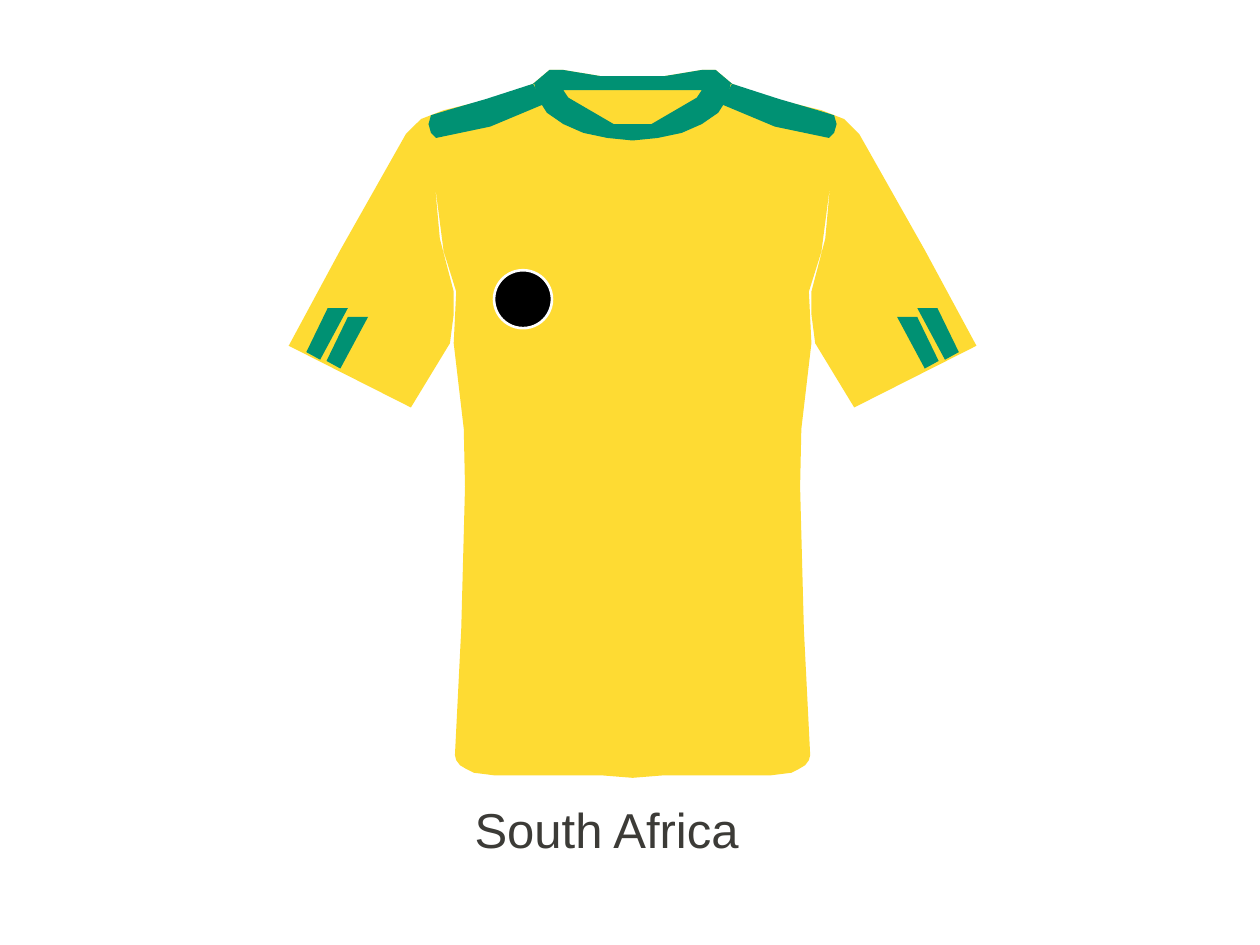
from math import cos, pi, sin

from pptx import Presentation
from pptx.dml.color import RGBColor
from pptx.enum.shapes import MSO_SHAPE
from pptx.enum.text import MSO_ANCHOR, MSO_AUTO_SIZE, PP_ALIGN
from pptx.util import Pt

YELLOW = RGBColor(0xFE, 0xDB, 0x33)
GREEN = RGBColor(0x00, 0x91, 0x73)
BLACK = RGBColor(0x00, 0x00, 0x00)
WHITE = RGBColor(0xFF, 0xFF, 0xFF)
GRAY = RGBColor(0x3C, 0x3B, 0x37)

SHIRT_SPAN = 546
NECKLINE = [(25, 5), (55, 0), (66, 0), (79, 11)]


def quarter_arc(cx, cy, rx, ry, steps=6):
    """List points from the side of an ellipse down to its bottom."""
    angles = [pi / 2 * i / steps for i in range(steps + 1)]
    return [(cx + rx * cos(a), cy + ry * sin(a)) for a in angles]


def flip(points, side):
    """Put points on the right (side 1) or the left (side -1) of the axis."""
    return [(side * x, y) for x, y in points]


def mirror(half):
    """Close a right half with its reflection in the shirt's axis."""
    return half + flip(half, -1)[::-1]


def shift(points, dx, dy):
    """Move points by a step."""
    return [(x + dx, y + dy) for x, y in points]


class Shirt:
    """A symmetric shirt: x runs from its axis, y down from its collar."""

    def __init__(self, s, left, top, width):
        """Scale the shirt's units to the width of the given box."""
        self.s = s
        self.scale = width / SHIRT_SPAN
        self.axis, self.top = int(left + width / 2), int(top)

    def draw(self):
        """Draw every part from back to front."""
        self.body()
        self.collar()
        for side in (-1, 1):
            self.shoulder_band(side)
            self.cuff_stripes(side)
        self.badge(-87, 182, 23)

    def outline(self, color, *contours):
        """Fill closed contours as one shape."""
        builder = self.s.shapes.build_freeform(*contours[0][0], scale=self.scale)
        for i, points in enumerate(contours):
            if i:
                builder.move_to(*points[0])
            builder.add_line_segments(points[1:], close=True)
        sp = builder.convert_to_shape(self.axis, self.top)
        sp.shadow.inherit = False
        sp.fill.solid()
        sp.fill.fore_color.rgb = color
        sp.line.fill.background()

    def body(self):
        """Draw torso and sleeves, with a thin gap along each armhole."""
        shoulder = [(93, 17), (121, 25), (150, 32), (168, 39), (180, 51)]
        sleeve = [(232, 143), (273, 219), (176, 268), (145, 217)]
        armhole_up = [(142, 194), (142, 176), (153, 134), (157, 90)]
        armhole_down = [(150, 144), (140, 176), (142, 217)]
        waist = [(134, 285), (133, 331), (136, 444)]
        hem = quarter_arc(110, 544, 31, 16) + [(25, 560), (0, 562)]
        armhole = armhole_up + armhole_down
        half = NECKLINE + shoulder + sleeve + armhole + waist + hem
        self.outline(YELLOW, mirror(half))

    def collar(self):
        """Draw the collar ring around the neck opening."""
        rim = NECKLINE + quarter_arc(0, 11, 78, 45)
        opening = [(55, 16), (51, 22), (15, 43)]
        self.outline(GREEN, mirror(rim), mirror(opening))

    def shoulder_band(self, side):
        """Draw the band from the collar to the top of one sleeve."""
        upper = [(79, 11), (116, 23), (147, 32)]
        tip = [(160, 36), (162, 43), (160, 50), (156, 54)]
        lower = [(113, 45), (70, 27)]
        self.outline(GREEN, flip(upper + tip + lower, side))

    def cuff_stripes(self, side, count=2):
        """Draw equal slanted stripes, each one step in from the cuff's edge."""
        stripe = [(242, 189), (259, 224), (248, 230), (226, 189)]
        for i in range(count):
            self.outline(GREEN, flip(shift(stripe, -16 * i, 7 * i), side))

    def badge(self, cx, cy, radius):
        """Draw the round chest badge with its white rim."""
        left = int(self.axis + (cx - radius) * self.scale)
        top = int(self.top + (cy - radius) * self.scale)
        size = int(2 * radius * self.scale)
        sp = self.s.shapes.add_shape(MSO_SHAPE.OVAL, left, top, size, size)
        sp.shadow.inherit = False
        sp.fill.solid()
        sp.fill.fore_color.rgb = BLACK
        sp.line.color.rgb = WHITE
        sp.line.width = Pt(1.5)


def write_text(sp, text, font="Arial", size=28, color=GRAY, align=PP_ALIGN.LEFT):
    """Write one formatted line of text into a shape."""
    tf = sp.text_frame
    tf.word_wrap = False
    tf.auto_size = MSO_AUTO_SIZE.SHAPE_TO_FIT_TEXT
    tf.vertical_anchor = MSO_ANCHOR.TOP
    p = tf.paragraphs[0]
    p.alignment = align
    r = p.add_run()
    r.text = text
    r.font.name = font
    r.font.size = Pt(size)
    r.font.color.rgb = color


def place_title(s, text, left, top, width, height):
    """Move the title placeholder into the given box and fill it."""
    sp = s.shapes.title
    sp.left, sp.top, sp.width, sp.height = left, top, width, height
    write_text(sp, text)


def main():
    """Build the shirt slide."""
    prs = Presentation()
    prs.slide_width, prs.slide_height = Pt(720), Pt(540)
    s = prs.slides.add_slide(prs.slide_layouts[5])
    Shirt(s, Pt(165), Pt(40), Pt(393)).draw()
    place_title(s, "South Africa", Pt(264), Pt(453), Pt(167), Pt(41))
    prs.save("out.pptx")


if __name__ == "__main__":
    main()
